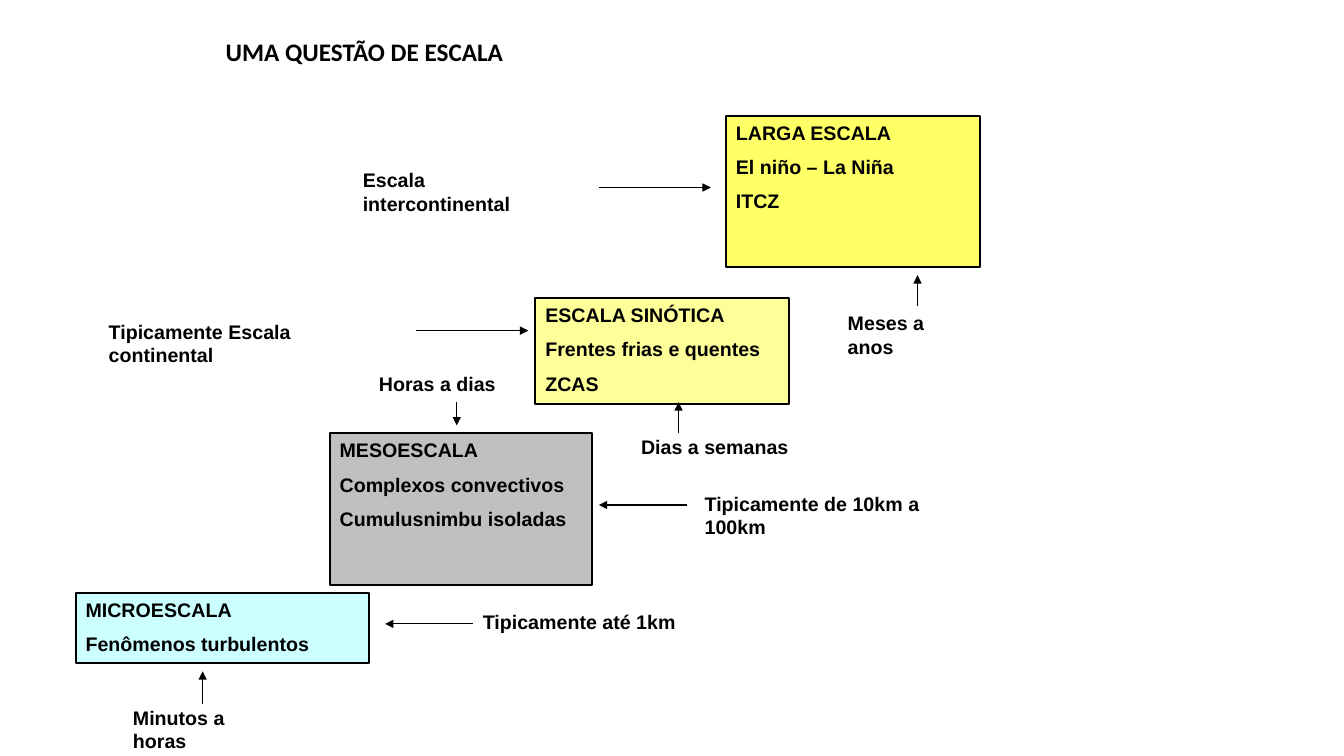
from lxml import etree
from pptx import Presentation
from pptx.dml.color import RGBColor
from pptx.enum.shapes import MSO_CONNECTOR, MSO_SHAPE
from pptx.enum.text import MSO_ANCHOR, PP_ALIGN
from pptx.oxml.ns import qn
from pptx.util import Inches, Pt

RECT = MSO_SHAPE.RECTANGLE
LINE = MSO_CONNECTOR.STRAIGHT
TOP = MSO_ANCHOR.TOP
LEFT = PP_ALIGN.LEFT

BLACK = RGBColor(0x00, 0x00, 0x00)
CYAN = RGBColor(0xCC, 0xFF, 0xFF)
GREY = RGBColor(0xC0, 0xC0, 0xC0)
PALE = RGBColor(0xFF, 0xFF, 0x99)
YELLOW = RGBColor(0xFF, 0xFF, 0x66)

SCALES = [
    (0.75, 5.88, 2.91, 0.7, CYAN, ["MICROESCALA", "Fenômenos turbulentos"]),
    (3.27, 4.3, 2.6, 1.5, GREY,
     ["MESOESCALA", "Complexos convectivos", "Cumulusnimbu isoladas"]),
    (5.31, 2.96, 2.52, 1.05, PALE,
     ["ESCALA SINÓTICA", "Frentes frias e quentes", "ZCAS"]),
    (7.2, 1.15, 2.52, 1.5, YELLOW,
     ["LARGA ESCALA", "El niño – La Niña", "ITCZ"]),
]
LABELS = [
    (4.69, 6, 2.18, "Tipicamente até 1km"),
    (6.89, 4.83, 2.98, "Tipicamente de 10km a\v100km"),
    (0.98, 3.12, 3.09, "Tipicamente Escala\vcontinental"),
    (3.5, 1.62, 2.32, "Escala\vintercontinental"),
    (1.22, 6.95, 1.69, "Minutos a\vhoras"),
    (8.31, 3.04, 1.46, "Meses a\vanos"),
    (6.26, 4.27, 1.73, "Dias a semanas"),
    (3.66, 3.64, 1.42, "Horas a dias"),
]
ARROWS = [
    (4.69, 6.19, 3.82, 6.19),
    (6.81, 5.01, 5.94, 5.01),
    (4.13, 3.28, 5.24, 3.28),
    (5.94, 1.86, 7.05, 1.86),
    (2.01, 6.98, 2.01, 6.66),
    (9.1, 3.04, 9.1, 2.73),
    (6.73, 4.3, 6.73, 3.99),
    (4.53, 3.99, 4.53, 4.22),
]


def write(shape, lines, font="Arial", size=14, gap=7.5):
    """Fill a shape with bold black paragraphs, spaced apart."""
    frame = shape.text_frame
    frame.word_wrap = True
    frame.vertical_anchor = TOP
    for i, line in enumerate(lines):
        para = frame.add_paragraph() if i else frame.paragraphs[0]
        para.text = line
        para.alignment = LEFT
        para.space_before = Pt(gap if i else 0)
        for run in para.runs:
            run.font.name = font
            run.font.size = Pt(size)
            run.font.bold = True
            run.font.color.rgb = BLACK


def add_scale(slide, left, top, width, height, fill, lines):
    """Draw the outlined box of one scale."""
    box = slide.shapes.add_shape(
        RECT, Inches(left), Inches(top), Inches(width), Inches(height))
    box.shadow.inherit = False
    box.fill.solid()
    box.fill.fore_color.rgb = fill
    box.line.color.rgb = BLACK
    box.line.width = Pt(1.5)
    write(box, lines)


def add_label(slide, left, top, width, text, height=0.33, **style):
    """Place a free line of text."""
    box = slide.shapes.add_textbox(
        Inches(left), Inches(top), Inches(width), Inches(height))
    write(box, [text], **style)


def add_arrow(slide, *ends):
    """Draw a thin arrow from the first point to the second."""
    arrow = slide.shapes.add_connector(LINE, *map(Inches, ends))
    arrow.line.color.rgb = BLACK
    arrow.line.width = Pt(0.75)
    etree.SubElement(arrow.line._get_or_add_ln(), qn("a:tailEnd"),
                     type="triangle")
    etree.SubElement(arrow._element.spPr, qn("a:effectLst"))


def main():
    """Build the slide of weather scales."""
    deck = Presentation()
    deck.slide_width = Inches(13.33)
    deck.slide_height = Inches(7.5)
    slide = deck.slides.add_slide(deck.slide_layouts[6])
    for scale in SCALES:
        add_scale(slide, *scale)
    for arrow in ARROWS:
        add_arrow(slide, *arrow)
    for label in LABELS:
        add_label(slide, *label)
    add_label(slide, 2.14, 0.31, 3.59, "UMA QUESTÃO DE ESCALA",
              height=0.4, font="Calibri", size=18)
    deck.save("out.pptx")


if __name__ == "__main__":
    main()
